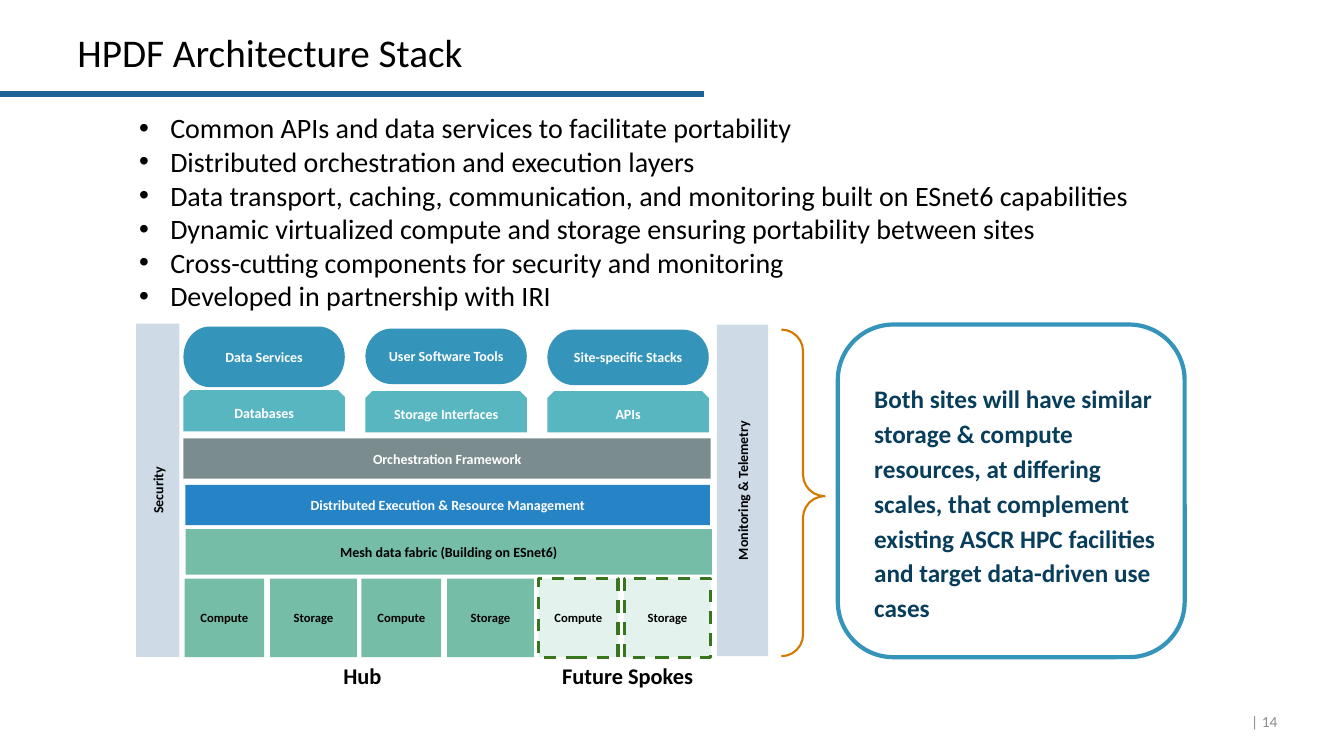
"""Build the HPDF Architecture Stack slide."""
from lxml import etree
from pptx import Presentation
from pptx.dml.color import RGBColor
from pptx.enum import dml, shapes, text
from pptx.oxml.ns import qn
from pptx.util import Inches, Pt

COLORS = {
    "black": "000000", "white": "FFFFFF", "rule": "1D6294", "side": "CEDBE6",
    "service": "3494BA", "interface": "58B6C0", "orchestration": "7A8C8E",
    "execution": "2683C6", "fabric": "75BDA7", "spoke": "E3F2ED",
    "spoke_edge": "38761D", "brace": "D57800", "note": "083E5B", "number": "8C8C8C",
}
TITLE = "HPDF Architecture Stack"
POINTS = [
    "Common APIs and data services to facilitate portability",
    "Distributed orchestration and execution layers",
    "Data transport, caching, communication, and monitoring built on ESnet6 capabilities",
    "Dynamic virtualized compute and storage ensuring portability between sites",
    "Cross-cutting components for security and monitoring",
    "Developed in partnership with IRI",
]
COLUMNS = [
    ("Data Services", 3.24, 0.6, "Databases", 3.87),
    ("User Software Tools", 3.26, 0.55, "Storage Interfaces", 3.88),
    ("Site-specific Stacks", 3.27, 0.55, "APIs", 3.88),
]
LAYERS = [
    ("Orchestration Framework", (1.82, 4.35, 5.23, 0.4), "orchestration", "white"),
    ("Distributed Execution & Resource Management", (1.84, 4.81, 5.2, 0.4), "execution", "white"),
    ("Mesh data fabric (Building on ESnet6)", (1.84, 5.25, 5.22, 0.45), "fabric", "black"),
]
SIDES = [
    ("Security", (-0.09, 4.65, 3.31, 0.43)),
    ("Monitoring & Telemetry", (5.72, 4.61, 3.29, 0.51)),
]
SITES = [("fabric", None), ("fabric", None), ("spoke", "spoke_edge")]
RESOURCES = [("Compute", 0, 0.79), ("Storage", 0.85, 0.86)]
CAPTIONS = [("Hub", (1.98, 6.47, 3.23, 0.47)), ("Future Spokes", (5.23, 6.47, 1.99, 0.47))]
NOTE = ("Both sites will have similar storage & compute resources, at differing scales, "
        "that complement existing ASCR HPC facilities and target data-driven use cases")
PAGE = "| 14"

COLUMN_LEFT, COLUMN_PITCH, COLUMN_WIDTH = 1.82, 1.805, 1.6
SITE_LEFT, SITE_PITCH, SITE_TOP, SITE_HEIGHT = 1.83, 1.755, 5.74, 0.78
KIND = shapes.MSO_SHAPE
ALIGN = text.PP_ALIGN
ANCHOR = text.MSO_ANCHOR


def rgb(name):
    """Return the named colour."""
    return RGBColor.from_string(COLORS[name])


def apply(target, values):
    """Set every attribute in values on target."""
    for name, value in values.items():
        setattr(target, name, value)


def write(holder, lines, size, color="black", bold=False, align=ALIGN.CENTER,
          anchor=ANCHOR.MIDDLE, insets=(0.1, 0.1, 0.1, 0.1), spacing=None, bullet=False):
    """Fill the text frame of holder with formatted paragraphs."""
    frame = holder.text_frame
    left, top, right, bottom = map(Inches, insets)
    apply(frame, {"word_wrap": True, "vertical_anchor": anchor, "margin_left": left,
                  "margin_top": top, "margin_right": right, "margin_bottom": bottom})
    for index, line in enumerate(lines):
        paragraph = frame.add_paragraph() if index else frame.paragraphs[0]
        paragraph.text = line
        apply(paragraph, {"alignment": align, "line_spacing": spacing})
        if bullet:
            properties = paragraph._p.get_or_add_pPr()
            properties.set("marL", str(Inches(0.69)))
            properties.set("indent", str(Inches(-0.31)))
            etree.SubElement(properties, qn("a:buFont")).set("typeface", "Arial")
            etree.SubElement(properties, qn("a:buChar")).set("char", "•")
        font = paragraph.runs[0].font
        apply(font, {"name": "Calibri", "size": Pt(size), "bold": bold})
        font.color.rgb = rgb(color)


def add_label(slide, box, lines, size, **style):
    """Add a text box."""
    write(slide.shapes.add_textbox(*map(Inches, box)), lines, size, **style)


def add_block(slide, kind, box, fill=None, edge=None, weight=0, dash=None):
    """Add a preset shape with a plain fill and outline."""
    block = slide.shapes.add_shape(kind, *map(Inches, box))
    block.shadow.inherit = False
    if fill:
        block.fill.solid()
        block.fill.fore_color.rgb = rgb(fill)
    else:
        block.fill.background()
    if edge:
        block.line.color.rgb = rgb(edge)
        apply(block.line, {"width": Pt(weight), "dash_style": dash})
    else:
        block.line.fill.background()
    return block


def add_heading(slide):
    """Add the rule, title and bullet points."""
    rule = slide.shapes.add_connector(shapes.MSO_CONNECTOR.STRAIGHT,
                                      *map(Inches, (0, 0.93, 6.98, 0.93)))
    rule.line.color.rgb = rgb("rule")
    rule.line.width = Pt(4.5)
    etree.SubElement(rule._element.spPr, qn("a:effectLst"))
    plain = {"align": ALIGN.LEFT, "anchor": ANCHOR.TOP, "insets": (0.1, 0.05, 0.1, 0.05)}
    add_label(slide, (0.67, 0.28, 11, 0.54), [TITLE], 28, spacing=0.9, **plain)
    add_label(slide, (0.9, 1.05, 10.81, 1.9), POINTS, 20, bullet=True, **plain)


def add_stack(slide):
    """Add the architecture stack with its side bars and captions."""
    for side, box in SIDES:
        bar = add_block(slide, KIND.RECTANGLE, box, "side")
        bar.rotation = 270
        write(bar, [side], 10, bold=True)
    for index, (service, top, height, interface, interface_top) in enumerate(COLUMNS):
        left = COLUMN_LEFT + index * COLUMN_PITCH
        for kind, name, y, tall, fill in (
                (KIND.FLOWCHART_TERMINATOR, service, top, height, "service"),
                (KIND.SNIP_2_SAME_RECTANGLE, interface, interface_top, 0.41, "interface")):
            block = add_block(slide, kind, (left, y, COLUMN_WIDTH, tall), fill)
            write(block, [name], 10, "white", True)
    for layer, box, fill, color in LAYERS:
        write(add_block(slide, KIND.RECTANGLE, box, fill), [layer], 10, color, True)
    for index, (fill, edge) in enumerate(SITES):
        for resource, offset, width in RESOURCES:
            box = (SITE_LEFT + index * SITE_PITCH + offset, SITE_TOP, width, SITE_HEIGHT)
            block = add_block(slide, KIND.RECTANGLE, box, fill, edge, 2.25,
                              dml.MSO_LINE.DASH)
            write(block, [resource], 9, bold=True)
    for caption, box in CAPTIONS:
        add_label(slide, box, [caption], 16, bold=True, anchor=ANCHOR.TOP)


def add_summary(slide):
    """Add the brace, the note beside it and the page number."""
    brace = add_block(slide, KIND.RIGHT_BRACE, (7.75, 3.27, 0.43, 3.24), None, "brace", 1.5)
    brace.adjustments[0], brace.adjustments[1] = 0.5, 0.51
    note = add_block(slide, KIND.ROUNDED_RECTANGLE, (8.31, 3.22, 3.44, 3.3),
                     "white", "service", 3)
    write(note, [NOTE], 18, "note", True, ALIGN.LEFT, insets=(0.2, 0.3, 0.1, 0.1), spacing=1.15)
    add_label(slide, (12.25, 6.96, 0.42, 0.4), [PAGE], 11, color="number",
              align=ALIGN.RIGHT, insets=(0, 0.05, 0, 0.05))


def main():
    """Build and save the slide."""
    deck = Presentation()
    apply(deck, {"slide_width": Inches(13.33), "slide_height": Inches(7.5)})
    slide = deck.slides.add_slide(deck.slide_layouts[6])
    for add_part in (add_heading, add_stack, add_summary):
        add_part(slide)
    deck.save("out.pptx")


if __name__ == "__main__":
    main()
